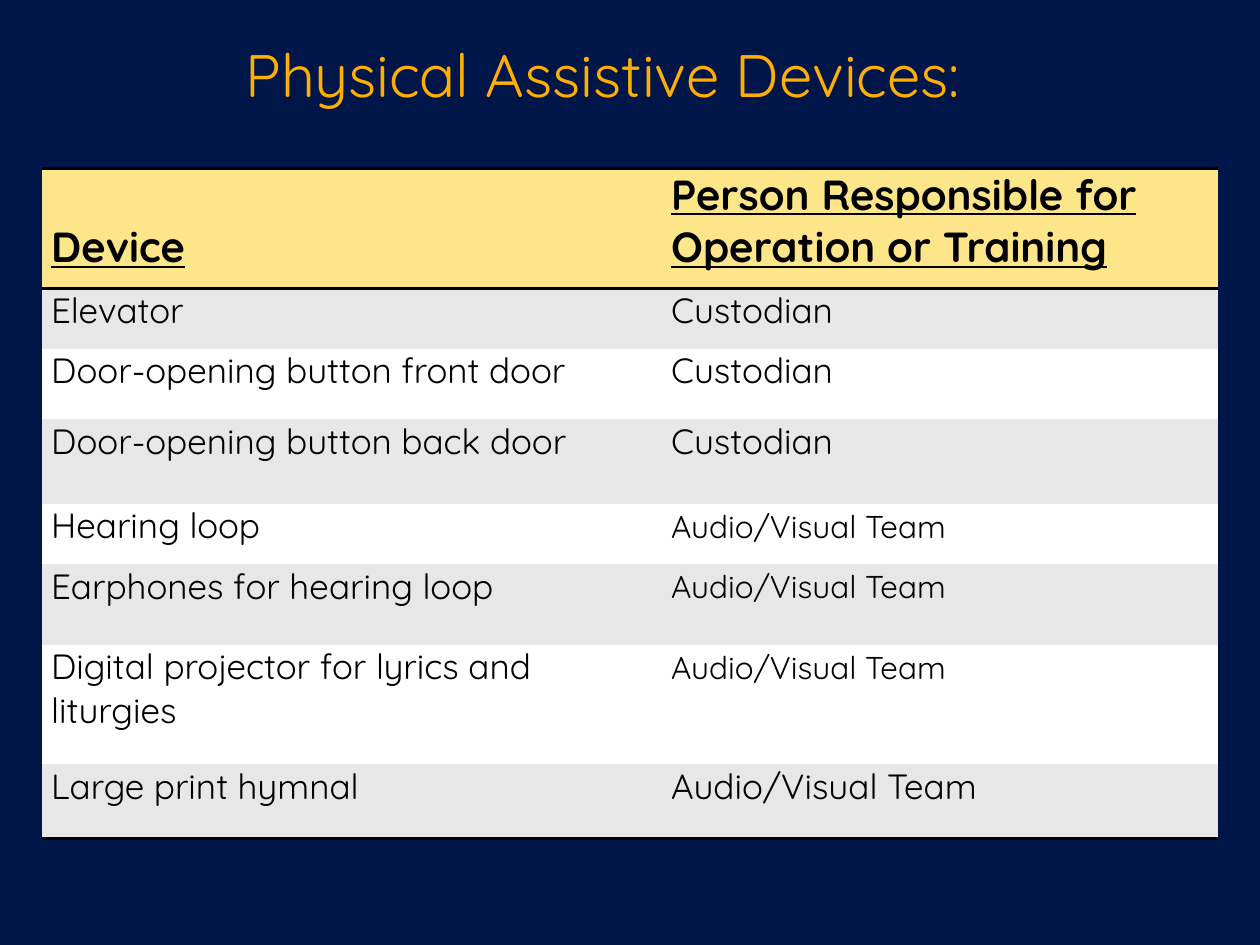
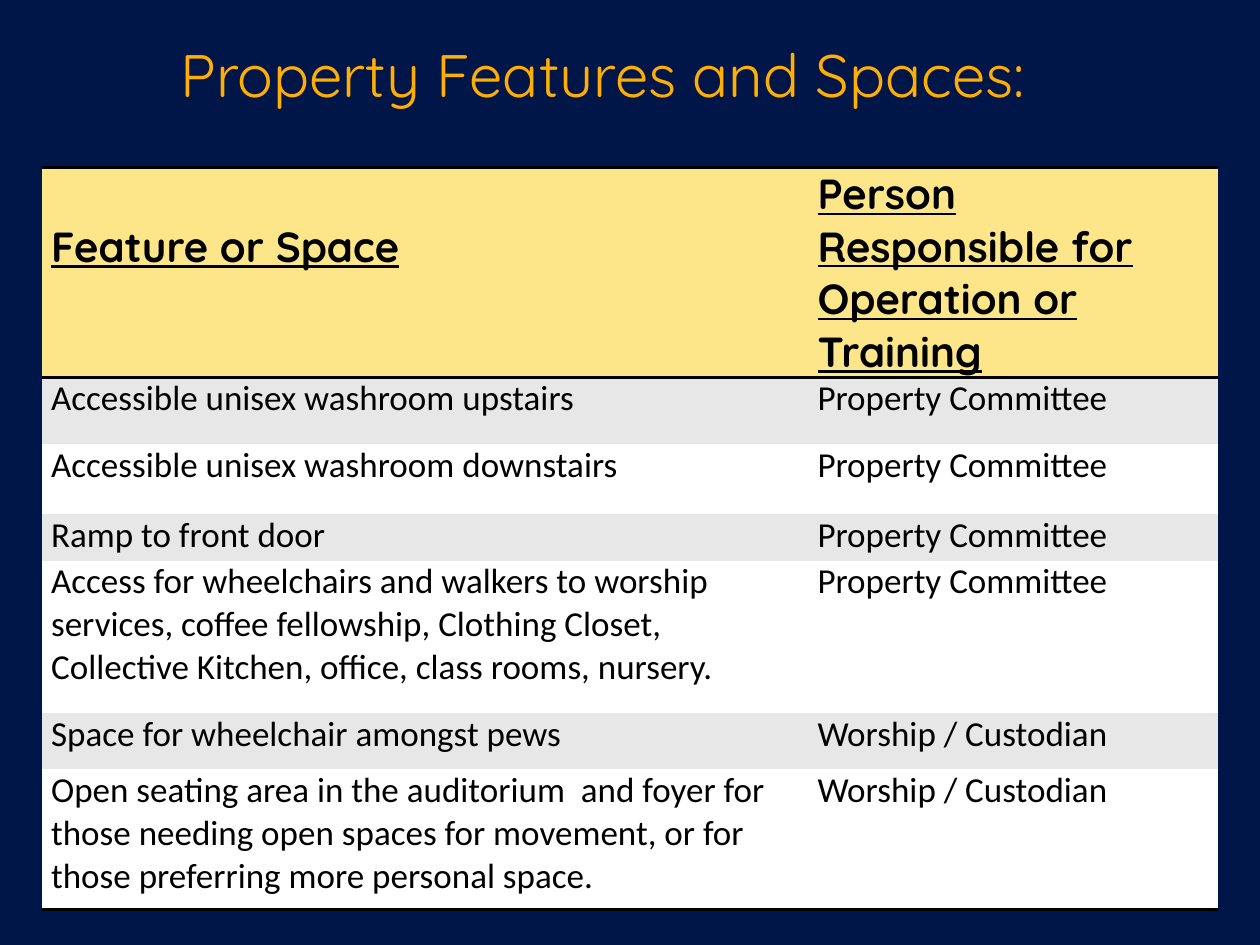
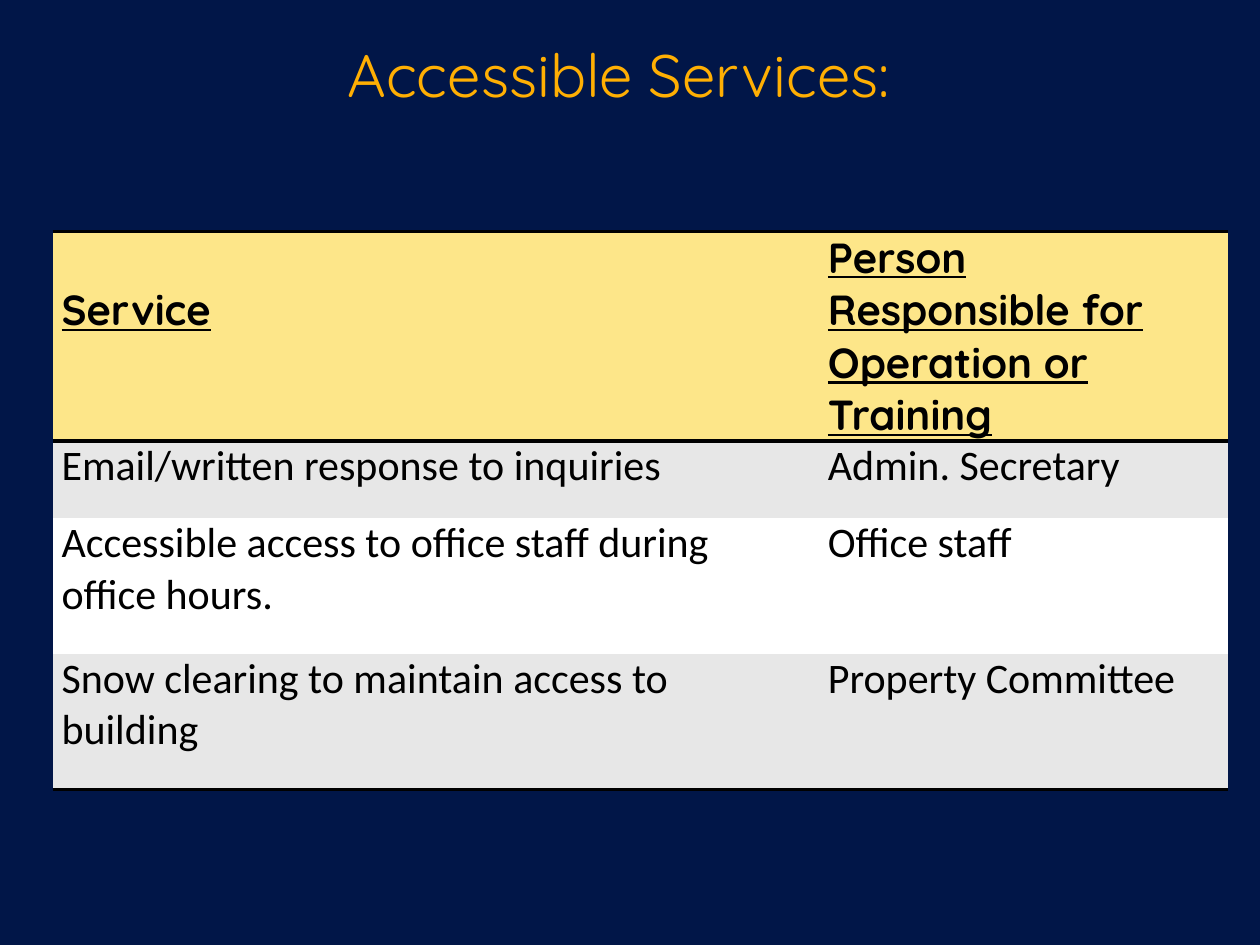
import dataclasses

import lxml.etree
import pptx
import pptx.dml.color
import pptx.enum.text
import pptx.oxml.ns
import pptx.util

Cm = pptx.util.Cm
Pt = pptx.util.Pt
RGB = pptx.dml.color.RGBColor.from_string


@dataclasses.dataclass(frozen=True)
class Theme:
    back: str = "011648"
    gold: str = "FFAF03"
    head: str = "FDE689"
    grey: str = "E7E7E7"
    white: str = "FFFFFF"
    black: str = "000000"
    font: str = "Quicksand"
    plain: str = "Calibri"
    title_size: float = 34.2
    head_size: int = 24
    body_size: int = 20
    small_size: int = 18
    rule: int = 2
    no_grid: str = "{2D5ABB26-0587-4C30-8999-92F81FD0307C}"


theme = Theme()


def write(frame, text, size, font=theme.font, color=theme.black, strong=False, align=None):
    """Put one formatted paragraph in a text frame; strong is bold and underlined."""
    frame.word_wrap = True
    para = frame.paragraphs[0]
    para.alignment = align
    run = para.add_run()
    run.text = text
    run.font.size = Pt(size)
    run.font.name = font
    run.font.color.rgb = RGB(color)
    run.font.bold = strong
    run.font.underline = strong


def edge(cell, side, shown):
    """Set a black rule or none on side T or B, T first; call it before the cell's fill."""
    qn = pptx.oxml.ns.qn
    line = lxml.etree.SubElement(cell._tc.get_or_add_tcPr(), qn("a:ln" + side),
                                 w=str(Pt(theme.rule)))
    if shown:
        fill = lxml.etree.SubElement(line, qn("a:solidFill"))
        lxml.etree.SubElement(fill, qn("a:srgbClr"), val=theme.black)
    else:
        lxml.etree.SubElement(line, qn("a:noFill"))


person = "Person Responsible for Operation or Training"
wide = 23.7
drop = 1.06  # one header line, so the left heading starts on the second
tall = 4.23  # four header lines

# Each row: height in cm, left text, right text and, where smaller, the right text's size.
pages = [
    dict(title="Physical Assistive Devices:", shift=0.64, left=0.85, top=3.39, first=12.5,
         font=theme.font, size=theme.body_size, rows=[
             (2.42, "Device", person),
             (1.22, "Elevator", "Custodian"),
             (1.42, "Door-opening button front door", "Custodian"),
             (1.7, "Door-opening button back door", "Custodian"),
             (1.22, "Hearing loop", "Audio/Visual Team", theme.small_size),
             (1.63, "Earphones for hearing loop", "Audio/Visual Team", theme.small_size),
             (2.41, "Digital projector for lyrics and liturgies", "Audio/Visual Team",
              theme.small_size),
             (1.5, "Large print hymnal", "Audio/Visual Team"),
         ]),
    dict(title="Property Features and Spaces:", shift=0.64, left=0.85, top=3.38, first=15.45,
         font=theme.plain, size=theme.body_size, rows=[
             (tall, "Feature or Space", person),
             (1.35, "Accessible unisex washroom upstairs", "Property Committee"),
             (1.4, "Accessible unisex washroom downstairs", "Property Committee"),
             (0.94, "Ramp to front door", "Property Committee"),
             (3.07, "Access for wheelchairs and walkers to worship services, coffee fellowship, "
              "Clothing Closet, Collective Kitchen, office, class rooms, nursery.",
              "Property Committee"),
             (1.14, "Space for wheelchair amongst pews", "Worship / Custodian"),
             (2.82, "Open seating area in the auditorium  and foyer for those needing open "
              "spaces for movement, or for those preferring more personal space.",
              "Worship / Custodian"),
         ]),
    dict(title="Accessible Services:", shift=0, left=1.06, top=4.66, first=15.45,
         font=theme.plain, size=theme.head_size, rows=[
             (tall, "Service", person),
             (1.55, "Email/written response to inquiries", "Admin. Secretary"),
             (2.74, "Accessible access to office staff during office hours.", "Office staff"),
             (2.74, "Snow clearing to maintain access to building", "Property Committee"),
         ]),
]

deck = pptx.Presentation()
deck.slide_width = Cm(25.4)
deck.slide_height = Cm(19.05)

for page in pages:
    slide = deck.slides.add_slide(deck.slide_layouts[6])
    slide.background.fill.solid()
    slide.background.fill.fore_color.rgb = RGB(theme.back)

    title = slide.shapes.add_textbox(Cm(1.47), Cm(0.64), Cm(22), Cm(2.18)).text_frame
    title.margin_right = Cm(0.25 + page["shift"])
    write(title, page["title"], theme.title_size, color=theme.gold,
          align=pptx.enum.text.PP_ALIGN.CENTER)

    rows = page["rows"]
    high = sum(row[0] for row in rows)
    table = slide.shapes.add_table(len(rows), 2, Cm(page["left"]), Cm(page["top"]),
                                   Cm(wide), Cm(high)).table
    table._tbl.tblPr[0].text = theme.no_grid
    table.first_row = table.horz_banding = False
    table.columns[0].width = Cm(page["first"])
    table.columns[1].width = Cm(wide - page["first"])

    for r, (height, *texts) in enumerate(rows):
        table.rows[r].height = Cm(height)
        small = texts[2] if len(texts) > 2 else page["size"]
        for c, text in enumerate(texts[:2]):
            cell = table.cell(r, c)
            cell.margin_left = cell.margin_right = Cm(0.18)
            cell.margin_top = cell.margin_bottom = 0
            edge(cell, "T", r < 2)
            edge(cell, "B", r in (0, len(rows) - 1))
            cell.fill.solid()
            if r == 0:
                cell.fill.fore_color.rgb = RGB(theme.head)
                cell.margin_top = Cm(drop if c == 0 else 0)
                write(cell.text_frame, text, theme.head_size, strong=True)
            else:
                cell.fill.fore_color.rgb = RGB(theme.grey if r % 2 else theme.white)
                size = small if c else page["size"]
                cell.margin_top = Pt(page["size"] - size)
                write(cell.text_frame, text, size, font=page["font"])

deck.save("out.pptx")
